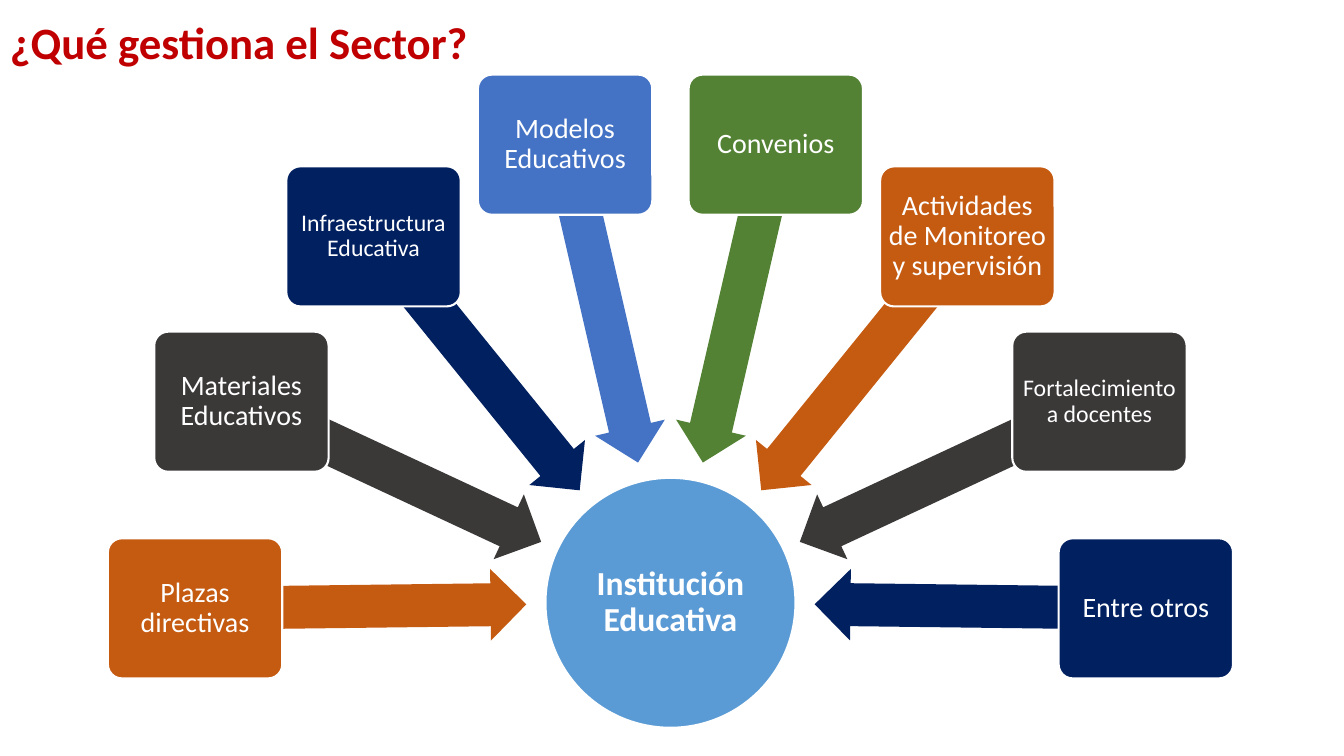
from pptx import Presentation
from pptx.dml.color import RGBColor
from pptx.enum.shapes import MSO_SHAPE
from pptx.enum.text import MSO_ANCHOR, PP_ALIGN
from pptx.util import Pt

PX = 9144  # 100 px to the inch
WHITE = RGBColor(0xFF, 0xFF, 0xFF)
RED = RGBColor(0xC0, 0x00, 0x00)
SKY = RGBColor(0x5B, 0x9B, 0xD5)
ORANGE = RGBColor(0xC5, 0x5A, 0x11)
GREY = RGBColor(0x3B, 0x38, 0x38)
NAVY = RGBColor(0x00, 0x20, 0x60)
BLUE = RGBColor(0x44, 0x72, 0xC4)
GREEN = RGBColor(0x54, 0x82, 0x35)

CENTER_X = 665
BOX_W, BOX_H = 173, 139
ARROW_H = 71

prs = Presentation()
prs.slide_width, prs.slide_height = 1333 * PX, 750 * PX
s = prs.slides.add_slide(prs.slide_layouts[6])


def add_filled(kind, x, y, w, h, color, outlined=True):
    sp = s.shapes.add_shape(kind, x * PX, y * PX, w * PX, h * PX)
    sp.shadow.inherit = False
    sp.fill.solid()
    sp.fill.fore_color.rgb = color
    if outlined:
        sp.line.color.rgb = WHITE
        sp.line.width = Pt(1.5)
    else:
        sp.line.fill.background()
    return sp


def write(sp, text, size, color, bold=False, align=PP_ALIGN.CENTER, margin=None):
    tf = sp.text_frame
    tf.word_wrap = True
    tf.vertical_anchor = MSO_ANCHOR.MIDDLE
    if margin is not None:
        for side in ("left", "right", "top", "bottom"):
            setattr(tf, f"margin_{side}", margin * PX)
    p = tf.paragraphs[0]
    p.alignment = align
    p.line_spacing = 0.9
    r = p.add_run()
    r.text = text
    for name, value in {"name": "Calibri", "size": Pt(size), "bold": bold}.items():
        setattr(r.font, name, value)
    r.font.color.rgb = color


title = s.shapes.add_textbox(0, 15 * PX, 1322 * PX, 59 * PX)
write(title, "¿Qué gestiona el Sector?", 32, RED, bold=True, align=PP_ALIGN.LEFT)

hub = add_filled(MSO_SHAPE.OVAL, CENTER_X - 124, 474, 248, 248, SKY)
write(hub, "Institución Educativa", 24, WHITE, bold=True, margin=2)

# Left half, bottom to top: box x, y; arrow x, y, length, rotation
tiers = [
    (107, 534, 193, 566, 329, 179.3),
    (153, 329, 225, 433, 327, 205),
    (284, 165, 311, 325, 324, 231),
    (474, 74, 435, 266, 323, 257),
]
# The right half mirrors the left, top to bottom
tiers += [
    (2 * CENTER_X - bx - BOX_W, by, 2 * CENTER_X - ax - length, ay, length, 540 - angle)
    for bx, by, ax, ay, length, angle in reversed(tiers)
]
topics = [
    ("Plazas directivas", 20, ORANGE),
    ("Materiales Educativos", 20, GREY),
    ("Infraestructura Educativa", 17, NAVY),
    ("Modelos Educativos", 20, BLUE),
    ("Convenios", 20, GREEN),
    ("Actividades de Monitoreo y supervisión", 20, ORANGE),
    ("Fortalecimiento a docentes", 17, GREY),
    ("Entre otros", 20, NAVY),
]
for (bx, by, ax, ay, length, angle), (text, size, color) in zip(tiers, topics):
    arrow = add_filled(MSO_SHAPE.LEFT_ARROW, ax, ay, length, ARROW_H, color, outlined=False)
    arrow.adjustments[0] = 0.6
    arrow.adjustments[1] = 0.5
    arrow.rotation = angle % 360

    box = add_filled(MSO_SHAPE.ROUNDED_RECTANGLE, bx, by, BOX_W, BOX_H, color)
    box.adjustments[0] = 0.1
    write(box, text, size, WHITE, margin=4)

prs.save("out.pptx")
